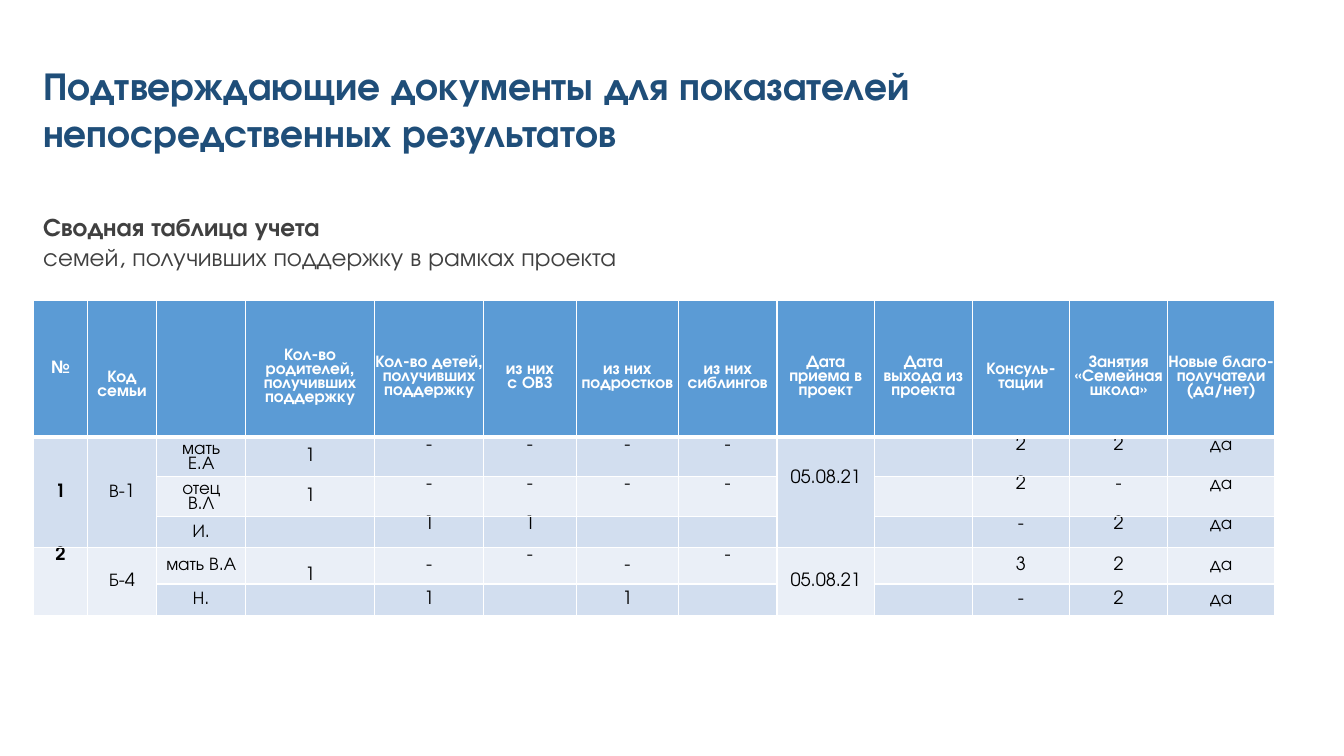
from lxml.etree import SubElement
from pptx import Presentation
from pptx.dml.color import RGBColor
from pptx.enum.text import MSO_ANCHOR as Anchor, PP_ALIGN as Align
from pptx.oxml.ns import qn
from pptx.util import Cm, Pt

FONT = "TeX Gyre Adventor"
NAVY = RGBColor(0x1F, 0x4E, 0x79)
GREY = RGBColor(0x40, 0x40, 0x40)
BLACK = RGBColor(0, 0, 0)
WHITE = RGBColor(0xFF, 0xFF, 0xFF)
HEADER_BLUE = RGBColor(0x5B, 0x9B, 0xD5)
BAND_DARK = RGBColor(0xD2, 0xDE, 0xEF)
BAND_LIGHT = RGBColor(0xEA, 0xEF, 0xF7)

COL_WIDTHS = [1.35, 1.75, 2.24, 3.25, 2.75, 2.33, 2.58, 2.48] + [2.46] * 4 + [2.71]
ROW_HEIGHTS = [3.43, 0.91, 0.91, 0.79, 0.91, 0.79]
HEADER = ["№", "Код семьи", "", "Кол-во родителей, получивших поддержку",
          "Кол-во детей, получивших поддержку", "из них\nс ОВЗ",
          "из них подростков", "из них сиблингов", "Дата приема в проект",
          "Дата выхода из проекта", "Консуль-тации",
          "Занятия «Семейная школа»", "Новые благо-получатели (да/нет)"]
FAMILIES = [
    ["1", "В-1", "мать\nЕ.А", "1", "-", "-", "-", "-", "05.08.21", "", "2", "2", "да"],
    ["", "", "отец\nВ.Л", "1", "-", "-", "-", "-", "", "", "2", "-", "да"],
    ["", "", "И.", "", "1", "1", "", "", "", "", "-", "2", "да"],
    ["2", "Б-4", "мать В.А", "1", "-", "-", "-", "-", "05.08.21", "", "3", "2", "да"],
    ["", "", "Н.", "", "1", "", "1", "", "", "", "-", "2", "да"],
]
FAMILY_ROWS = [(1, 3), (4, 5)]
MERGED_COLS = (0, 1, 8)
HEADER_DROP = {0: 0.03, 1: 0.83}  # top margins that lower the header text
DATE_DROP = 0.87


def add_text(tf, text, size, color, bold=False, align=Align.LEFT, spacing=1.0,
             new=False):
    """Write each line of text as a paragraph; new=True appends to the frame."""
    for i, line in enumerate(text.split("\n")):
        p = tf.add_paragraph() if new or i else tf.paragraphs[0]
        p.alignment = align
        p.line_spacing = spacing
        if line:
            r = p.add_run()
            r.text = line
            r.font.name = FONT
            r.font.size = Pt(size)
            r.font.bold = bold
            r.font.color.rgb = color


def add_box(slide, left, top, width, height, anchor=Anchor.TOP):
    tf = slide.shapes.add_textbox(Cm(left), Cm(top), Cm(width), Cm(height)).text_frame
    tf.word_wrap = True
    tf.vertical_anchor = anchor
    return tf


def set_borders(cell, **widths):
    tc_pr = cell._tc.get_or_add_tcPr()
    for side in "LRTB":
        ln = SubElement(tc_pr, qn(f"a:ln{side}"), w=str(Pt(widths.get(side, 1))))
        fill = SubElement(ln, qn("a:solidFill"))
        SubElement(fill, qn("a:srgbClr"), val=str(WHITE))


def cell_anchor(row, col):
    if (row, col) == (4, 3):
        return Anchor.BOTTOM
    if (1 <= row <= 3 and col >= 4) or (row == 4 and col in (0, 5, 7)):
        return Anchor.TOP
    return Anchor.MIDDLE


def fill_cell(cell, row, col, text):
    header = row == 0
    set_borders(cell, T=3 if row == 1 else 1, B=3 if header else 1)
    cell.fill.solid()
    cell.fill.fore_color.rgb = (HEADER_BLUE if header
                                else BAND_DARK if row % 2 else BAND_LIGHT)
    cell.margin_left = cell.margin_right = Cm(0.01)
    cell.margin_top = Cm(0.03)
    cell.margin_bottom = 0
    if header:
        cell.margin_top = Cm(HEADER_DROP.get(col, 0.43))
    elif (row, col) == (1, 8):
        cell.margin_top = Cm(DATE_DROP)
    cell.vertical_anchor = cell_anchor(row, col)
    add_text(cell.text_frame, text, 12 if header else 13,
             WHITE if header else BLACK, bold=header or col == 0,
             align=Align.CENTER, spacing=0.88)


def add_family_table(slide):
    rows = [HEADER] + FAMILIES
    table = slide.shapes.add_table(len(rows), len(HEADER), Cm(0.85), Cm(7.58),
                                   Cm(sum(COL_WIDTHS)), Cm(sum(ROW_HEIGHTS))).table
    for column, width in zip(table.columns, COL_WIDTHS):
        column.width = Cm(width)
    for table_row, height in zip(table.rows, ROW_HEIGHTS):
        table_row.height = Cm(height)
    for row, texts in enumerate(rows):
        for col, text in enumerate(texts):
            fill_cell(table.cell(row, col), row, col, text)
    # One number, code and start date per family
    for first, last in FAMILY_ROWS:
        for col in MERGED_COLS:
            table.cell(first, col).merge(table.cell(last, col))


def main():
    prs = Presentation()
    prs.slide_width, prs.slide_height = Cm(33.87), Cm(19.05)
    slide = prs.slides.add_slide(prs.slide_layouts[6])

    # Title
    title = add_box(slide, 0.84, 1.22, 24.59, 3.02, Anchor.MIDDLE)
    add_text(title, "Подтверждающие документы для показателей "
                    "непосредственных результатов", 28, NAVY, bold=True)

    # Table of families
    add_family_table(slide)

    # Table caption
    caption = add_box(slide, 0.84, 5.2, 30.18, 2.06)
    add_text(caption, "Сводная таблица учета", 18, GREY, bold=True)
    add_text(caption, "семей, получивших поддержку в рамках проекта", 18, GREY, new=True)

    prs.save("out.pptx")


if __name__ == "__main__":
    main()
